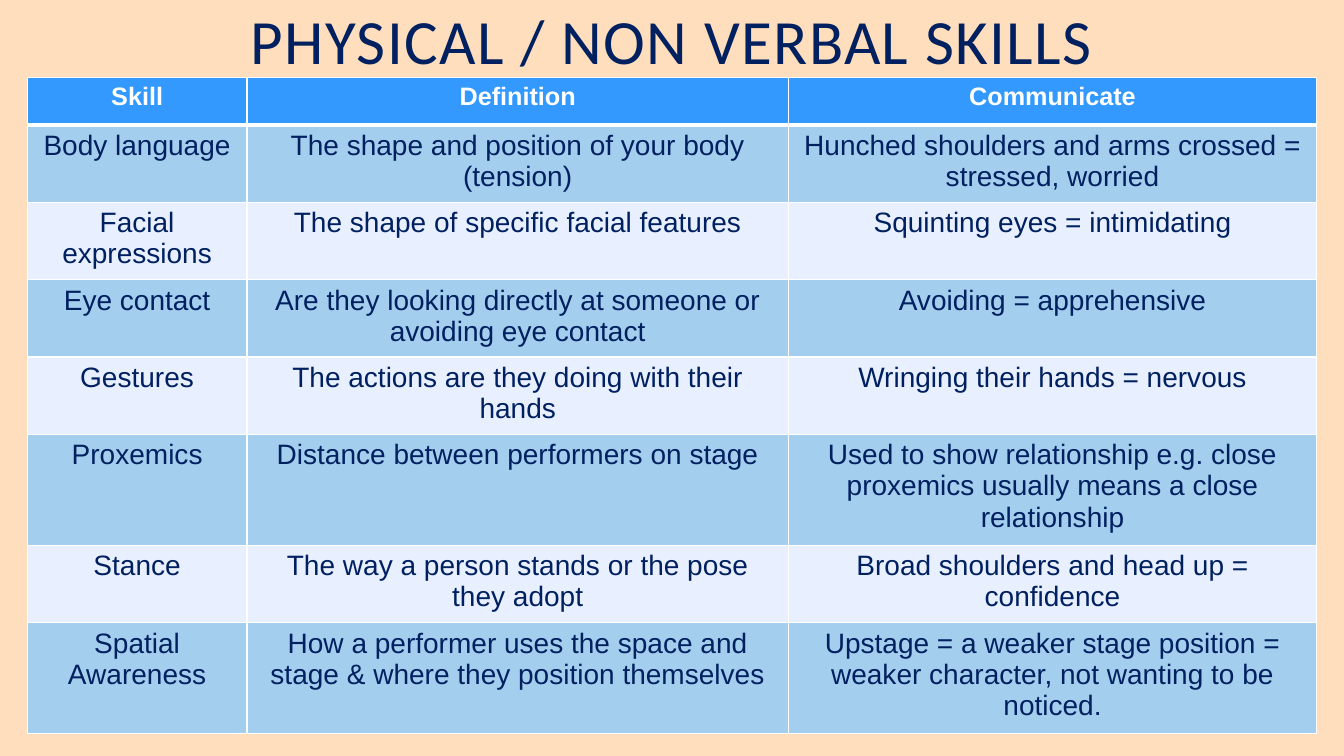
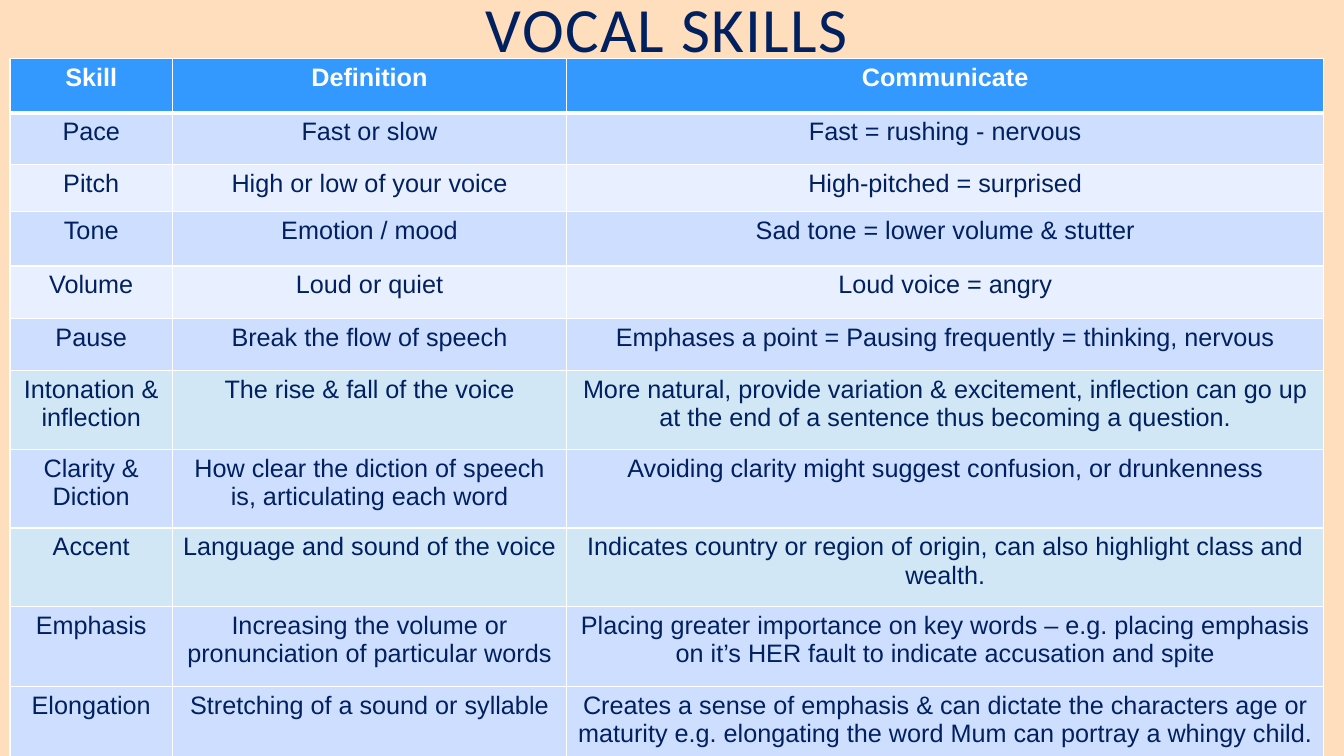
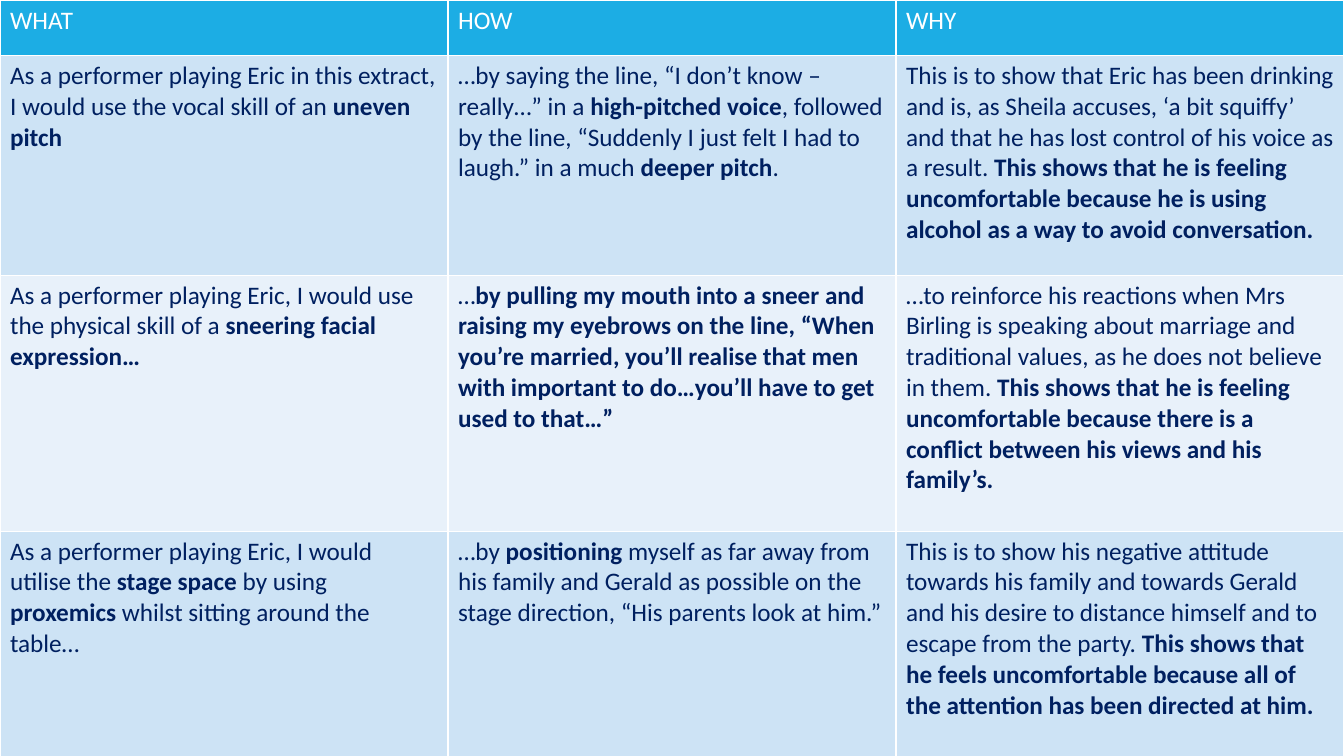
"""Build three slides of tables on acting skills and how to write about them."""
from lxml.etree import SubElement
from pptx import Presentation
from pptx.dml.color import RGBColor
from pptx.enum.text import MSO_ANCHOR as Anchor, PP_ALIGN as Align
from pptx.oxml import parse_xml
from pptx.oxml.ns import nsdecls, qn
from pptx.util import Inches, Pt

WIDTH, HEIGHT = 13.33, 7.5
PEACH = RGBColor(0xFF, 0xDE, 0xBD)
NAVY = RGBColor(0x00, 0x20, 0x60)
WHITE = RGBColor(0xFF, 0xFF, 0xFF)
BLUE = RGBColor(0x33, 0x99, 0xFF)
CYAN = RGBColor(0x1C, 0xAD, 0xE4)
SKY = RGBColor(0xA3, 0xCE, 0xED)
ICE = RGBColor(0xE8, 0xEF, 0xFF)
PERIWINKLE = RGBColor(0xCE, 0xDE, 0xFF)
AQUA = RGBColor(0xD1, 0xE7, 0xF6)
MIST = RGBColor(0xCD, 0xE3, 0xF5)
FROST = RGBColor(0xE8, 0xF1, 0xFA)

SKILL_HEADER = ("Skill", "Definition", "Communicate")

PHYSICAL = [
    SKILL_HEADER,
    ("Body language", "The shape and position of your body (tension)",
     "Hunched shoulders and arms crossed = stressed, worried"),
    ("Facial expressions", "The shape of specific facial features",
     "Squinting eyes = intimidating"),
    ("Eye contact", "Are they looking directly at someone or avoiding eye contact",
     "Avoiding = apprehensive"),
    ("Gestures", "The actions are they doing with their hands",
     "Wringing their hands = nervous"),
    ("Proxemics", "Distance between performers on stage",
     "Used to show relationship e.g. close proxemics usually means a close relationship"),
    ("Stance", "The way a person stands or the pose they adopt",
     "Broad shoulders and head up = confidence"),
    ("Spatial Awareness",
     "How a performer uses the space and stage & where they position themselves",
     "Upstage = a weaker stage position = weaker character, not wanting to be noticed."),
]

VOCAL = [
    SKILL_HEADER,
    ("Pace", "Fast or slow", "Fast = rushing - nervous"),
    ("Pitch", "High or low of your voice", "High-pitched = surprised"),
    ("Tone", "Emotion / mood", "Sad tone = lower volume & stutter"),
    ("Volume", "Loud or quiet", "Loud voice = angry"),
    ("Pause", "Break the flow of speech",
     "Emphases a point = Pausing frequently = thinking, nervous"),
    ("Intonation & inflection", "The rise & fall of the voice",
     "More natural, provide variation & excitement, inflection can go up at the end of "
     "a sentence thus becoming a question."),
    ("Clarity & Diction", "How clear the diction of speech is, articulating each word",
     "Avoiding clarity might suggest confusion, or drunkenness"),
    ("Accent", "Language and sound of the voice",
     "Indicates country or region of origin, can also highlight class and wealth."),
    ("Emphasis", "Increasing the volume or pronunciation of particular words",
     "Placing greater importance on key words – e.g. placing emphasis on it’s HER fault "
     "to indicate accusation and spite"),
    ("Elongation", "Stretching of a sound or syllable",
     "Creates a sense of emphasis & can dictate the characters age or maturity e.g. "
     "elongating the word Mum can portray a whingy child."),
]

WRITING = [
    ("WHAT", "HOW", "WHY"),
    ("As a performer playing Eric in this extract, I would use the vocal skill of an "
     "**uneven pitch**",
     "…by saying the line, “I don’t know – really…” in a **high-pitched voice**, followed "
     "by the line, “Suddenly I just felt I had to laugh.” in a much **deeper pitch**.",
     "This is to show that Eric has been drinking and is, as Sheila accuses, ‘a bit "
     "squiffy’ and that he has lost control of his voice as a result. **This shows that he "
     "is feeling uncomfortable because he is using alcohol as a way to avoid "
     "conversation.**"),
    ("As a performer playing Eric, I would use the physical skill of a "
     "**sneering facial expression…**",
     "…**by pulling my mouth into a sneer and raising my eyebrows on the line, “When "
     "you’re married, you’ll realise that men with important to do…you’ll have to get "
     "used to that…”**",
     "…to reinforce his reactions when Mrs Birling is speaking about marriage and "
     "traditional values, as he does not believe in them. **This shows that he is feeling "
     "uncomfortable because there is a conflict between his views and his family’s.**"),
    ("As a performer playing Eric, I would utilise the **stage space **by using "
     "**proxemics** whilst sitting around the table…",
     "…by **positioning** myself as far away from his family and Gerald as possible on "
     "the stage direction, “His parents look at him.”",
     "This is to show his negative attitude towards his family and towards Gerald and his "
     "desire to distance himself and to escape from the party. **This shows that he feels "
     "uncomfortable because all of the attention has been directed at him.**"),
]

SLIDES = [
    dict(title=("PHYSICAL / NON VERBAL SKILLS", 1.25, 0.14, 10.83, 0.63),
         rows=PHYSICAL, left=0.27, top=0.77, columns=(2.18, 5.37, 5.24),
         heights=[0.47] + [0.72] * 4 + [1.03, 0.72, 1.09],
         fills=[BLUE] + [SKY, ICE] * 3 + [SKY], header_rule=3,
         header=dict(bold=True), body=dict(size=20),
         both=dict(font="Arial", align=Align.CENTER)),
    dict(title=("VOCAL SKILLS", 1.2, 0.18, 10.83, 0.32),
         rows=VOCAL, left=0.1, top=0.58, columns=(1.61, 3.91, 7.51),
         heights=[0.54, 0.51, 0.47, 0.54, 0.52, 0.52] + [0.78] * 3 + [0.79] * 2,
         fills=[BLUE] + [PERIWINKLE, ICE] * 2 + [PERIWINKLE, AQUA] * 2 + [PERIWINKLE] * 2,
         header_rule=3, header=dict(bold=True), body={},
         both=dict(font="Arial", align=Align.CENTER)),
    dict(title=None, rows=WRITING, left=0, top=0, columns=(WIDTH / 3,) * 3,
         heights=[0.55, 2.18, 2.54, 2.24], fills=[CYAN, MIST, FROST, MIST],
         header_rule=1, header={}, body={}, both={}),
]


def write_text(frame, text, size=18, font="Calibri", color=NAVY, bold=False,
               align=Align.LEFT, line_spacing=None, tracking=None):
    """Fill the frame with one paragraph; words between ** marks are bold."""
    paragraph = frame.paragraphs[0]
    paragraph.alignment = align
    paragraph.line_spacing = line_spacing
    for index, part in enumerate(text.split("**")):
        if not part:
            continue
        run = paragraph.add_run()
        run.text = part
        run.font.size, run.font.name = Pt(size), font
        run.font.bold = bold or index % 2 == 1
        run.font.color.rgb = color
        if tracking:
            run.font._element.set("spc", str(tracking * 100))


def set_borders(cell, **widths):
    """Draw white cell borders; the widths are points by side."""
    properties = cell._tc.get_or_add_tcPr()
    for index, side in enumerate("LRTB"):
        line = parse_xml(f'<a:ln{side} {nsdecls("a")} w="{Pt(widths.get(side, 1))}"/>')
        fill = SubElement(line, qn("a:solidFill"))
        SubElement(fill, qn("a:srgbClr")).set("val", str(WHITE))
        properties.insert(index, line)


def add_title(slide, text, *box):
    """Add the slide's large centred title."""
    frame = slide.shapes.add_textbox(*map(Inches, box)).text_frame
    frame.word_wrap = True
    frame.vertical_anchor = Anchor.MIDDLE
    frame.margin_top = frame.margin_bottom = 0
    write_text(frame, text, size=45, align=Align.CENTER, line_spacing=0.8, tracking=1)


def add_grid(slide, rows, left, top, columns, heights, fills, header_rule,
             header, body, both):
    """Add a table with a coloured header row and filled body rows."""
    box = (left, top, sum(columns), sum(heights))
    table = slide.shapes.add_table(len(rows), len(columns), *map(Inches, box)).table
    table.horz_banding = False
    for column, width in zip(table.columns, columns):
        column.width = Inches(width)
    for index, (row, texts) in enumerate(zip(table.rows, rows)):
        row.height = Inches(heights[index])
        text_format = dict(header, color=WHITE) if index == 0 else body
        rule = {0: {"B": header_rule}, 1: {"T": header_rule}}.get(index, {})
        for cell, text in zip(row.cells, texts):
            cell.fill.solid()
            cell.fill.fore_color.rgb = fills[index]
            set_borders(cell, **rule)
            write_text(cell.text_frame, text, **both, **text_format)


def main():
    """Build and save the presentation."""
    presentation = Presentation()
    presentation.slide_width, presentation.slide_height = Inches(WIDTH), Inches(HEIGHT)
    background = presentation.slide_master.background.fill
    background.solid()
    background.fore_color.rgb = PEACH
    for content in SLIDES:
        slide = presentation.slides.add_slide(presentation.slide_layouts[6])
        grid = dict(content)
        title = grid.pop("title")
        if title:
            add_title(slide, *title)
        add_grid(slide, **grid)
    presentation.save("out.pptx")


if __name__ == "__main__":
    main()
